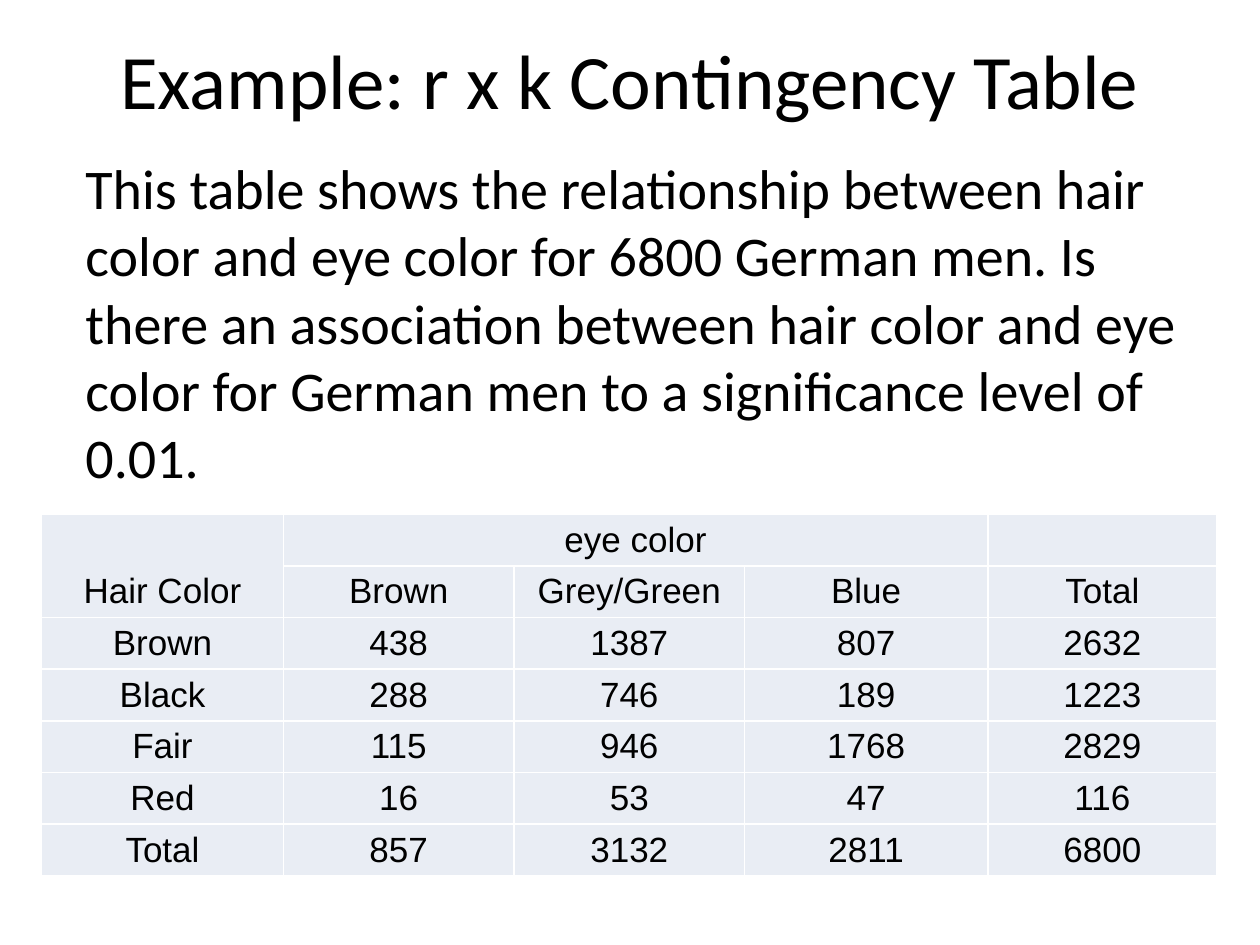
from lxml.etree import SubElement
from pptx import Presentation
from pptx.dml.color import RGBColor
from pptx.enum.text import MSO_ANCHOR as Anchor, MSO_AUTO_SIZE as AutoSize, PP_ALIGN as Align
from pptx.oxml.ns import qn
from pptx.util import Inches, Pt

BLACK = RGBColor(0x00, 0x00, 0x00)
WHITE = RGBColor(0xFF, 0xFF, 0xFF)
PALE_BLUE = RGBColor(0xE9, 0xED, 0xF4)

TITLE_FONT = {"name": "Calibri", "size": Pt(44)}
QUESTION_FONT = {"name": "Calibri", "size": Pt(32)}
COUNT_FONT = {"name": "Arial", "size": Pt(20)}

TITLE = "Example: r x k Contingency Table"
QUESTION = (
    "This table shows the relationship between hair color and eye color "
    "for 6800 German men. Is there an association between hair color and "
    "eye color for German men to a significance level of 0.01."
)
COUNTS = [
    ["Hair Color", "eye color", "", "", ""],
    ["", "Brown", "Grey/Green", "Blue", "Total"],
    ["Brown", 438, 1387, 807, 2632],
    ["Black", 288, 746, 189, 1223],
    ["Fair", 115, 946, 1768, 2829],
    ["Red", 16, 53, 47, 116],
    ["Total", 857, 3132, 2811, 6800],
]
COLUMN_WIDTHS = [1.92, 1.83, 1.83, 1.93, 1.82]
ROW_HEIGHT = 0.41


def apply(target, values):
    for attribute, value in values.items():
        setattr(target, attribute, value)


def write(frame, text, font, align):
    paragraph = frame.paragraphs[0]
    paragraph.alignment = align
    paragraph.text = text
    for face in [paragraph.font] + [run.font for run in paragraph.runs]:
        apply(face, font)
        face.color.rgb = BLACK


def add_title(slide):
    title = slide.shapes.title
    apply(title, {"left": Inches(0.5), "top": 0,
                  "width": Inches(9), "height": Inches(1.25)})
    apply(title.text_frame, {"vertical_anchor": Anchor.MIDDLE, "word_wrap": True})
    write(title.text_frame, TITLE, TITLE_FONT, Align.CENTER)


def add_question(slide):
    question = slide.shapes.add_textbox(
        Inches(0.58), Inches(1.17), Inches(9.08), Inches(2.79))
    apply(question.text_frame, {"word_wrap": True,
                                "auto_size": AutoSize.SHAPE_TO_FIT_TEXT})
    write(question.text_frame, QUESTION, QUESTION_FONT, Align.LEFT)


def add_borders(cell):
    properties = cell._tc.get_or_add_tcPr()
    for side in ("lnL", "lnR", "lnT", "lnB"):
        line = SubElement(properties, qn(f"a:{side}"), w=str(Pt(1)))
        fill = SubElement(line, qn("a:solidFill"))
        SubElement(fill, qn("a:srgbClr"), val=str(WHITE))


def format_cell(cell, value):
    add_borders(cell)
    cell.fill.solid()
    cell.fill.fore_color.rgb = PALE_BLUE
    cell.vertical_anchor = Anchor.MIDDLE
    write(cell.text_frame, str(value), COUNT_FONT, Align.CENTER)


def add_contingency_table(slide):
    frame = slide.shapes.add_table(
        len(COUNTS), len(COLUMN_WIDTHS), Inches(0.33), Inches(4.08),
        Inches(sum(COLUMN_WIDTHS)), Inches(ROW_HEIGHT * len(COUNTS)))
    table = frame.table
    apply(table, {"first_row": False, "horz_banding": False})
    for column, width in zip(table.columns, COLUMN_WIDTHS):
        column.width = Inches(width)
    for row, values in zip(table.rows, COUNTS):
        row.height = Inches(ROW_HEIGHT)
        for cell, value in zip(row.cells, values):
            format_cell(cell, value)
    hair_heading, eye_heading = table.cell(0, 0), table.cell(0, 1)
    hair_heading.merge(table.cell(1, 0))
    eye_heading.merge(table.cell(0, 3))
    hair_heading.vertical_anchor = Anchor.BOTTOM


def main():
    deck = Presentation()
    apply(deck, {"slide_width": Inches(10), "slide_height": Inches(7.5)})
    slide = deck.slides.add_slide(deck.slide_layouts[5])
    add_title(slide)
    add_contingency_table(slide)
    add_question(slide)
    deck.save("out.pptx")


if __name__ == "__main__":
    main()
